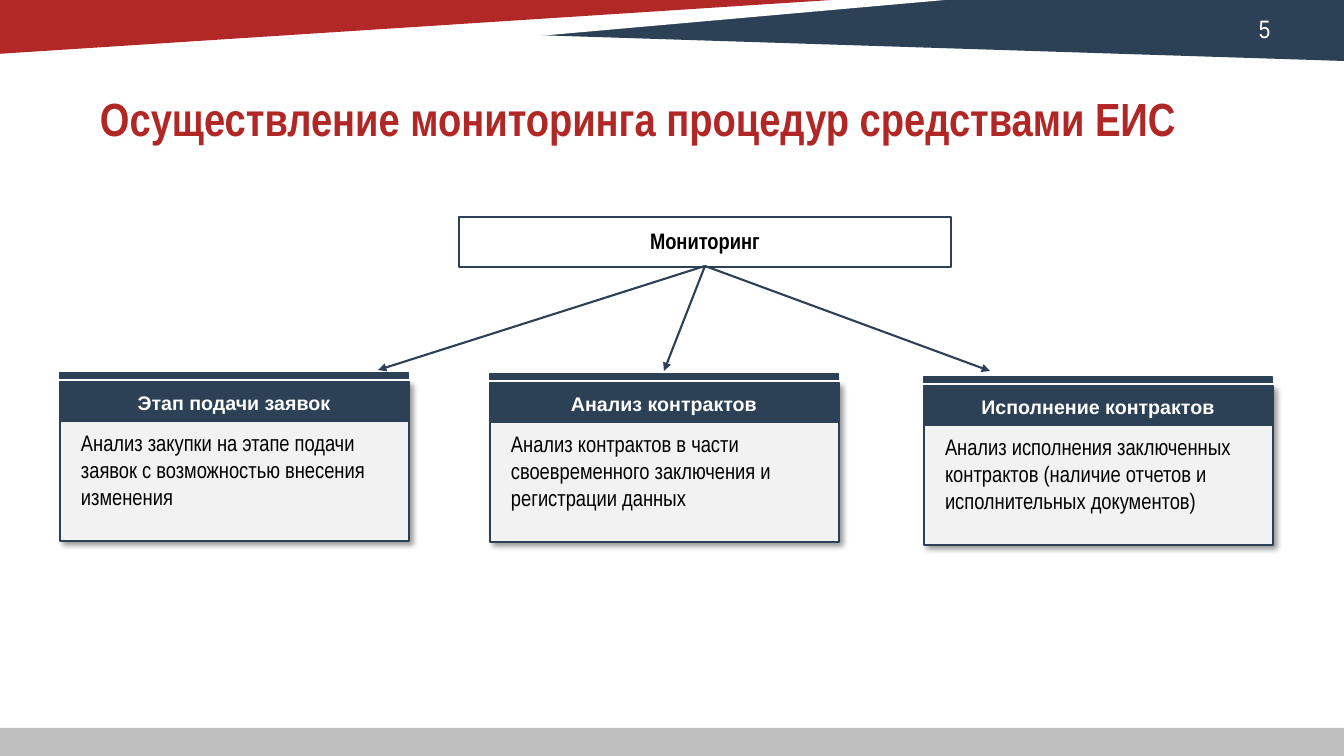
from lxml import etree
from pptx import Presentation
from pptx.dml.color import RGBColor
from pptx.enum.shapes import MSO_CONNECTOR, MSO_SHAPE
from pptx.enum.text import MSO_ANCHOR, PP_ALIGN
from pptx.oxml import parse_xml
from pptx.oxml.ns import nsdecls, qn
from pptx.util import Emu, Pt

SCALE = 914400 / 100.8
NAVY, RED, WHITE, BLACK = "2C4156", "B12826", "FFFFFF", "000000"
NARROW = "Arial Narrow"

CARDS = [
    (60, 382, "Этап подачи заявок",
     "Анализ закупки на этапе подачи заявок с возможностью внесения изменения"),
    (490, 383, "Анализ контрактов",
     "Анализ контрактов в части своевременного заключения и регистрации данных"),
    (924, 386, "Исполнение контрактов",
     "Анализ исполнения заключенных контрактов (наличие отчетов и исполнительных документов)"),
]
BANDS = [
    (NAVY, [(1344, -5), (1345, 61), (408, 31), (196, -5)]),
    (WHITE, [(-3, -4), (-3, 84), (990, -4)]),
    (WHITE, [(-5, -5), (-2, 88), (843, -4)]),
    (RED, [(-3, -4), (-3, 54), (894, -4)]),
]
ARROW_TIPS = [(378, 370), (664, 371), (990, 371)]

prs = Presentation()
prs.slide_width, prs.slide_height = Emu(round(1344 * SCALE)), Emu(round(756 * SCALE))
slide = prs.slides.add_slide(prs.slide_layouts[6])
shapes = slide.shapes


def rect(x, y, w, h, fill, line=None, weight=1.5):
    box = shapes.add_shape(MSO_SHAPE.RECTANGLE, *(Emu(round(v * SCALE)) for v in (x, y, w, h)))
    box.shadow.inherit = False
    box.fill.solid()
    box.fill.fore_color.rgb = RGBColor.from_string(fill)
    if line:
        box.line.color.rgb = RGBColor.from_string(line)
        box.line.width = Pt(weight)
    else:
        box.line.fill.background()
    return box


def write(text, at=None, into=None, size=16, font=NARROW, color=BLACK, bold=False,
          align=PP_ALIGN.LEFT, anchor=MSO_ANCHOR.TOP, inset=(0, 0), spacing=None):
    """Write text in a new box at (x, y, w, h), or in an existing shape; inset is (sides, top and bottom)."""
    box = into or shapes.add_textbox(*(Emu(round(v * SCALE)) for v in at))
    frame = box.text_frame
    frame.word_wrap = True
    frame.vertical_anchor = anchor
    frame.margin_left = frame.margin_right = Emu(round(inset[0] * SCALE))
    frame.margin_top = frame.margin_bottom = Emu(round(inset[1] * SCALE))
    paragraph = frame.paragraphs[0]
    paragraph.alignment = align
    if spacing:
        paragraph.line_spacing = spacing
    run = paragraph.add_run()
    run.text = text
    run.font.size, run.font.name, run.font.bold = Pt(size), font, bold
    run.font.color.rgb = RGBColor.from_string(color)


# Header bands, footer, page number and title
for color, (start, *rest) in BANDS:
    builder = shapes.build_freeform(*start, scale=SCALE)
    builder.add_line_segments(rest, close=True)
    band = builder.convert_to_shape()
    band.shadow.inherit = False
    band.fill.solid()
    band.fill.fore_color.rgb = RGBColor.from_string(color)
    band.line.fill.background()
rect(0, 728, 1344, 28, "BFBFBF")
write("5", at=(1259, 13, 60, 30), size=18, color=WHITE)
write("Осуществление мониторинга процедур средствами ЕИС", at=(100, 95, 1158, 86),
      size=33.2, color="B12726", bold=True, spacing=0.93)

# Root box
root = rect(459, 217, 492, 50, WHITE, NAVY)
write("Мониторинг", into=root, bold=True, align=PP_ALIGN.CENTER,
      anchor=MSO_ANCHOR.MIDDLE, inset=(8, 0), spacing=0.9)

# Cards
for x, y, heading, body in CARDS:
    panel = rect(x, y, 349, 159, "F2F2F2", NAVY)
    panel_effects = panel._element.spPr.find(qn("a:effectLst"))
    panel_effects.append(parse_xml(
        f'<a:outerShdw {nsdecls("a")} blurRad="{Pt(4)}" dist="{Pt(3)}" dir="2700000" '
        'algn="tl" rotWithShape="0"><a:srgbClr val="000000"><a:alpha val="40000"/>'
        '</a:srgbClr></a:outerShdw>'))
    rect(x, y - 9, 349, 6, NAVY, NAVY, 0.75)
    rect(x, y, 349, 39, NAVY, NAVY)
    write(heading, at=(x + 11, y + 9, 326, 24), size=14, font="Arial", color=WHITE,
          bold=True, align=PP_ALIGN.CENTER)
    write(body, at=(x + 11, y + 42, 335, 92), inset=(10, 5))

# Arrows from the root box to the cards
for tip in ARROW_TIPS:
    arrow = shapes.add_connector(MSO_CONNECTOR.STRAIGHT,
                                 *(Emu(round(v * SCALE)) for v in (705, 266, *tip)))
    arrow.line.color.rgb = RGBColor.from_string(NAVY)
    arrow.line.width = Pt(1.5)
    etree.SubElement(arrow.line._get_or_add_ln(), qn("a:tailEnd"), type="triangle")
    etree.SubElement(arrow._element.spPr, qn("a:effectLst"))

prs.save("out.pptx")
